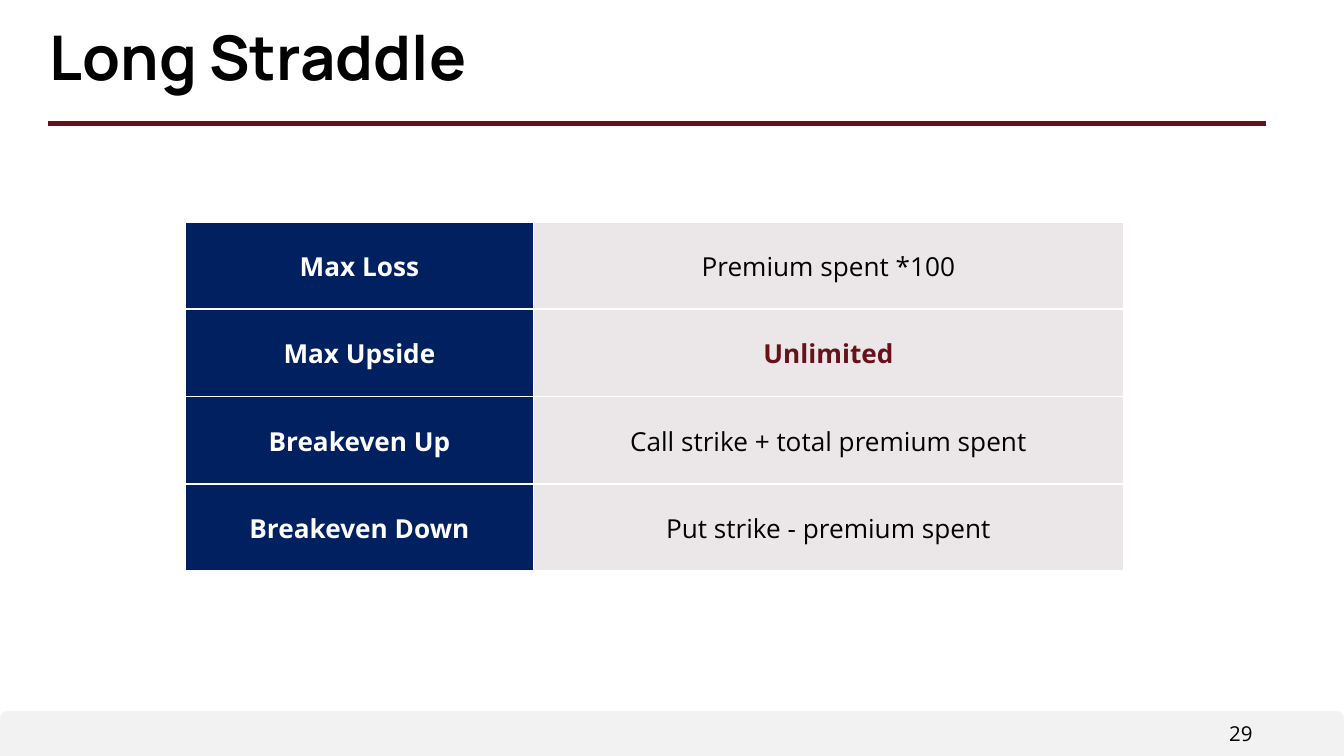
"""Build the Long Straddle slide with its payoff summary table."""
from dataclasses import dataclass

from lxml.etree import SubElement
from pptx import Presentation
from pptx.dml.color import RGBColor
from pptx.enum.shapes import MSO_CONNECTOR as Connector, MSO_SHAPE as Shape
from pptx.enum.text import MSO_ANCHOR as Anchor, PP_ALIGN as Align
from pptx.oxml.ns import qn
from pptx.slide import Slide
from pptx.table import _Cell as Cell
from pptx.text.text import _Paragraph as Paragraph
from pptx.util import Inches, Pt

COLORS = {
    "white": "FFFFFF",
    "black": "000000",
    "navy": "002060",
    "maroon": "67121B",
    "stone": "EBE7E8",
    "footer": "F2F2F2",
}
WIDTH = 10
HEIGHT = WIDTH * 9 / 16
FOOTER_TOP = 5.29
TABLE_LEFT, TABLE_TOP = 1.38, 1.65
COLUMNS = (2.59, 4.39)
ROW_HEIGHT = 0.65


@dataclass(frozen=True)
class TextStyle:
    size: float
    color: str = "black"
    bold: bool = False
    font: str = "Open Sans"
    align: Align = Align.CENTER


@dataclass(frozen=True)
class Outcome:
    label: str
    value: str
    highlight: bool = False


OUTCOMES = (
    Outcome("Max Loss", "Premium spent *100"),
    Outcome("Max Upside", "Unlimited", highlight=True),
    Outcome("Breakeven Up", "Call strike + total premium spent"),
    Outcome("Breakeven Down", "Put strike - premium spent"),
)


def rgb(name: str) -> RGBColor:
    return RGBColor.from_string(COLORS[name])


def style_text(para: Paragraph, text: str, style: TextStyle) -> None:
    para.text = text
    para.alignment = style.align
    for span in para.runs:
        span.font.name = style.font
        span.font.size = Pt(style.size)
        span.font.bold = style.bold
        span.font.color.rgb = rgb(style.color)


def add_text(page: Slide, bounds: tuple, text: str, style: TextStyle, anchor: Anchor) -> Paragraph:
    frame = page.shapes.add_textbox(*map(Inches, bounds)).text_frame
    frame.word_wrap = True
    frame.vertical_anchor = anchor
    frame.margin_left = frame.margin_right = Inches(0.07)
    frame.margin_top = frame.margin_bottom = Inches(0.04)
    style_text(frame.paragraphs[0], text, style)
    return frame.paragraphs[0]


def add_footer(page: Slide) -> None:
    bounds = (0, FOOTER_TOP, WIDTH, HEIGHT - FOOTER_TOP)
    band = page.shapes.add_shape(Shape.ROUND_2_SAME_RECTANGLE, *map(Inches, bounds))
    band.shadow.inherit = False
    band.fill.solid()
    band.fill.fore_color.rgb = rgb("footer")
    band.line.fill.background()
    add_text(page, (8.12, 5.33, 1.27, 0.25), "29", TextStyle(11, align=Align.RIGHT), Anchor.MIDDLE)


def add_heading(page: Slide) -> None:
    rule = page.shapes.add_connector(Connector.STRAIGHT, *map(Inches, (0.36, 0.92, 9.42, 0.92)))
    rule.line.color.rgb = rgb("maroon")
    rule.line.width = Pt(2.5)
    SubElement(rule.element.spPr, qn("a:effectLst"))
    style = TextStyle(33, bold=True, font="Manrope", align=Align.LEFT)
    title = add_text(page, (0.3, 0.16, 9.31, 0.68), "Long Straddle", style, Anchor.TOP)
    title.line_spacing = 0.9


def add_borders(cell: Cell) -> None:
    properties = cell._tc.get_or_add_tcPr()
    for index, side in enumerate(("lnL", "lnR", "lnT", "lnB")):
        line = properties.makeelement(qn(f"a:{side}"), {"w": str(Pt(1))})
        fill = SubElement(line, qn("a:solidFill"))
        SubElement(fill, qn("a:srgbClr"), val=COLORS["white"])
        properties.insert(index, line)


def fill_cell(cell: Cell, text: str, fill: str, style: TextStyle) -> None:
    cell.fill.solid()
    cell.fill.fore_color.rgb = rgb(fill)
    cell.vertical_anchor = Anchor.MIDDLE
    cell.margin_left = cell.margin_right = cell.margin_top = Inches(0.01)
    cell.margin_bottom = 0
    style_text(cell.text_frame.paragraphs[0], text, style)
    add_borders(cell)


def add_outcomes(page: Slide) -> None:
    bounds = (TABLE_LEFT, TABLE_TOP, sum(COLUMNS), ROW_HEIGHT * len(OUTCOMES))
    table = page.shapes.add_table(len(OUTCOMES), len(COLUMNS), *map(Inches, bounds)).table
    for column, width in zip(table.columns, COLUMNS):
        column.width = Inches(width)
    for row, outcome in enumerate(OUTCOMES):
        table.rows[row].height = Inches(ROW_HEIGHT)
        color = "maroon" if outcome.highlight else "black"
        fill_cell(table.cell(row, 0), outcome.label, "navy", TextStyle(14, "white", True))
        fill_cell(table.cell(row, 1), outcome.value, "stone", TextStyle(14, color, outcome.highlight))


def main() -> None:
    deck = Presentation()
    deck.slide_width, deck.slide_height = Inches(WIDTH), Inches(HEIGHT)
    page = deck.slides.add_slide(deck.slide_layouts[6])
    add_footer(page)
    add_heading(page)
    add_outcomes(page)
    deck.save("out.pptx")


if __name__ == "__main__":
    main()
